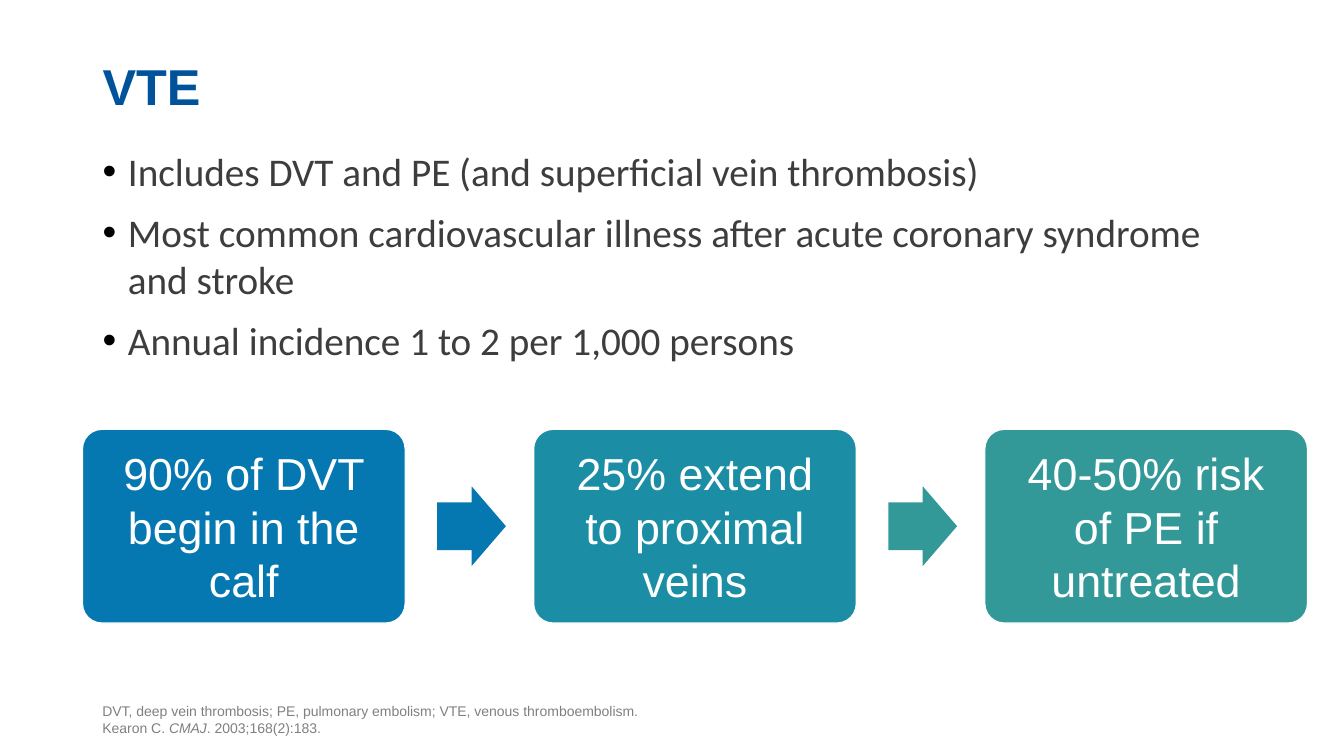
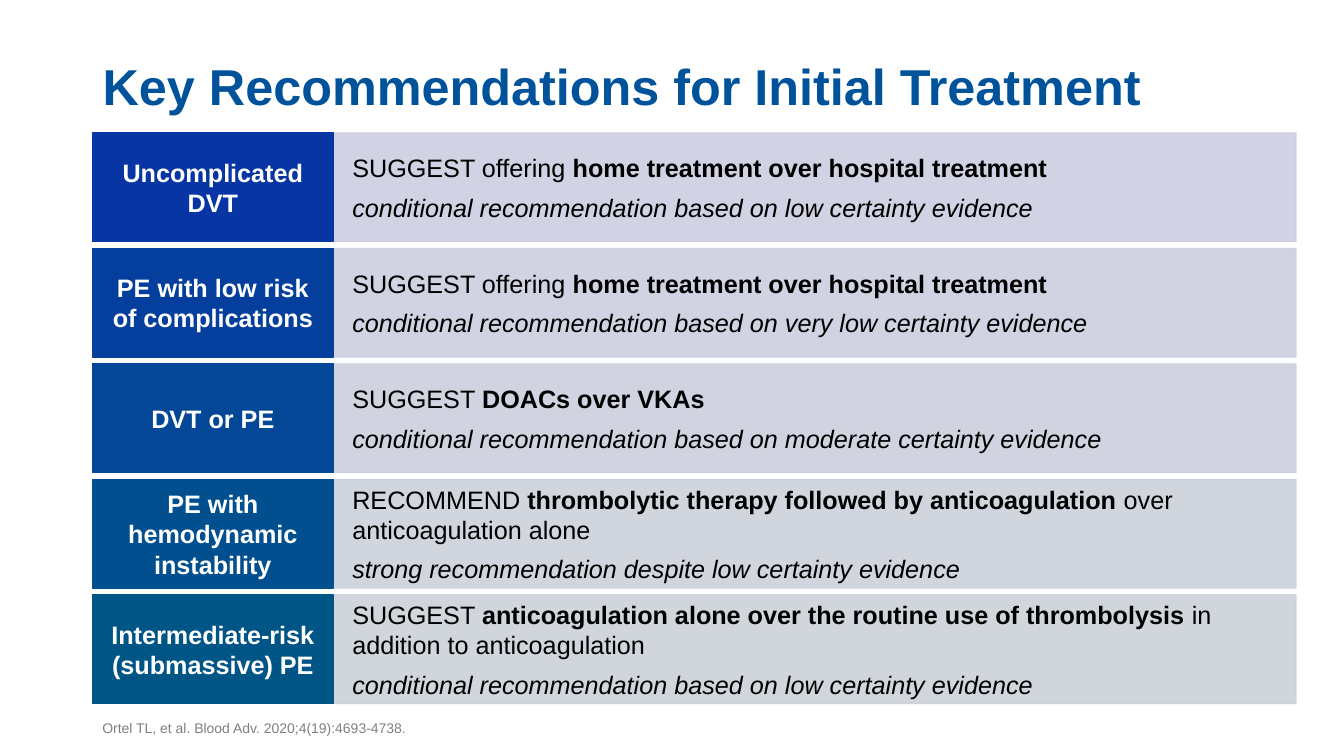
from lxml.etree import SubElement
from pptx import Presentation
from pptx.dml.color import RGBColor
from pptx.enum.shapes import MSO_SHAPE as Shape
from pptx.enum.text import MSO_ANCHOR as Anchor, MSO_AUTO_SIZE as AutoSize, PP_ALIGN as Align
from pptx.oxml.ns import qn
from pptx.util import Cm, Pt

COLORS = {
    "title": "00539B", "body": "3D3D3D", "note": "808080", "black": "000000", "white": "FFFFFF",
    "calf": "0577B1", "proximal": "1B8EA6", "embolism": "339898",
    "label 1": "0736A4", "label 2": "053F9D", "label 3": "034796", "label 4": "014F8F", "label 5": "005587",
    "advice 1": "CCCEE0", "advice 2": "CCCFDF", "advice 3": "CCD0DD", "advice 4": "CCD1DB", "advice 5": "CCD1D9",
}
LEFT, WIDTH = 2.33, 29.21

FACTS = [
    "Includes DVT and PE (and superficial vein thrombosis)",
    "Most common cardiovascular illness after acute coronary syndrome and stroke",
    "Annual incidence 1 to 2 per 1,000 persons",
]
STEPS = [
    ("90% of DVT begin in the calf", "calf"),
    ("25% extend to proximal veins", "proximal"),
    ("40-50% risk of PE if untreated", "embolism"),
]
ARROWS = ["calf", "embolism"]
VTE_NOTE = [
    [("DVT, deep vein thrombosis; PE, pulmonary embolism; VTE, venous thromboembolism.", "")],
    [("Kearon C. ", ""), ("CMAJ", "i"), (". 2003;168(2):183.", "")],
]
RECOMMENDATIONS = [
    ("Uncomplicated DVT",
     [("SUGGEST offering ", ""), ("home treatment over hospital treatment", "b")],
     "conditional recommendation based on low certainty evidence"),
    ("PE with low risk of complications",
     [("SUGGEST offering ", ""), ("home treatment over hospital treatment", "b")],
     "conditional recommendation based on very low certainty evidence"),
    ("DVT or PE",
     [("SUGGEST ", ""), ("DOACs over VKAs", "b")],
     "conditional recommendation based on moderate certainty evidence"),
    ("PE with hemodynamic instability",
     [("RECOMMEND ", ""), ("thrombolytic therapy followed by anticoagulation ", "b"),
      ("over anticoagulation alone", "")],
     "strong recommendation despite low certainty evidence"),
    ("Intermediate-risk (submassive) PE",
     [("SUGGEST ", ""), ("anticoagulation alone over the routine use of thrombolysis ", "b"),
      ("in addition to anticoagulation", "")],
     "conditional recommendation based on low certainty evidence"),
]
TREATMENT_NOTE = [[("Ortel TL, et al. Blood Adv. 2020;4(19):4693-4738.", "")]]


def color(name):
    return RGBColor.from_string(COLORS[name])


def place(shape, left, top, width, height):
    shape.left, shape.top, shape.width, shape.height = Cm(left), Cm(top), Cm(width), Cm(height)


def style(para, size, name, face="Arial", bold=False, align=Align.LEFT):
    para.alignment = align
    font = para.font
    font.size, font.name, font.bold = Pt(size), face, bold
    font.color.rgb = color(name)


def add_spans(para, spans):
    for text, emphasis in spans:
        span = para.add_run()
        span.text = text
        if emphasis == "b":
            span.font.bold = True
        elif emphasis == "i":
            span.font.italic = True


def add_bullet(para):
    props = para._p.get_or_add_pPr()
    props.set("marL", str(Cm(0.64)))
    props.set("indent", str(-Cm(0.64)))
    tint = SubElement(props, qn("a:buClr"))
    SubElement(tint, qn("a:srgbClr"), val=COLORS["black"])
    SubElement(props, qn("a:buFont"), typeface="Arial")
    SubElement(props, qn("a:buChar"), char="•")


def add_page(deck, layout, title, note):
    page = deck.slides.add_slide(deck.slide_layouts[layout])
    heading = page.shapes.title
    place(heading, LEFT, 0, WIDTH, 3.07)
    frame = heading.text_frame
    frame.text = title
    frame.auto_size, frame.vertical_anchor = AutoSize.NONE, Anchor.BOTTOM
    frame.paragraphs[0].line_spacing = 0.9
    style(frame.paragraphs[0], 36, "title", bold=True)

    box = page.shapes.add_textbox(Cm(LEFT), Cm(17.65), Cm(WIDTH), Cm(1.02))
    frame = box.text_frame
    frame.word_wrap, frame.vertical_anchor = True, Anchor.BOTTOM
    para = frame.paragraphs[0]
    for number, spans in enumerate(note):
        if number:
            para.add_line_break()
        add_spans(para, spans)
    style(para, 10, "note")
    return page


def add_block(page, kind, bounds, fill, line=None, margin=0.33):
    block = page.shapes.add_shape(kind, *map(Cm, bounds))
    block.shadow.inherit = False
    block.fill.solid()
    block.fill.fore_color.rgb = color(fill)
    if line:
        block.line.color.rgb = color(line)
        block.line.width = Pt(0.85)
    else:
        block.line.fill.background()
    frame = block.text_frame
    frame.word_wrap, frame.vertical_anchor = True, Anchor.MIDDLE
    frame.margin_left = frame.margin_right = Cm(margin)
    frame.margin_top = frame.margin_bottom = Cm(0.1)
    return block


def make_translucent(block, percent):
    for tint in block._element.spPr.iter(qn("a:srgbClr")):
        SubElement(tint, qn("a:alpha"), val=str(percent * 1000))


def build_vte(deck):
    page = add_page(deck, 1, "VTE", VTE_NOTE)
    body = page.placeholders[1]
    place(body, LEFT, 3.58, WIDTH, 13.59)
    frame = body.text_frame
    frame.text = "\n".join(FACTS)
    frame.auto_size = AutoSize.NONE
    for number, para in enumerate(frame.paragraphs):
        add_bullet(para)
        para.space_before = Pt(10 if number else 0)
        style(para, 28, "body", "Calibri")

    left, top, width, height, pitch = 2.08, 10.82, 8.13, 4.88, 11.37
    for number, (text, fill) in enumerate(STEPS):
        bounds = (left + number * pitch, top, width, height)
        step = add_block(page, Shape.ROUNDED_RECTANGLE, bounds, fill, "white")
        step.adjustments[0] = 0.1
        step.text_frame.text = text
        style(step.text_frame.paragraphs[0], 32, "white", align=Align.CENTER)

    arrow_height = 2.01
    for number, fill in enumerate(ARROWS):
        bounds = (left + number * pitch + 8.94, top + (height - arrow_height) / 2, 1.73, arrow_height)
        arrow = add_block(page, Shape.RIGHT_ARROW, bounds, fill)
        arrow.adjustments[0], arrow.adjustments[1] = 0.6, 0.5


def build_treatment(deck):
    page = add_page(deck, 5, "Key Recommendations for Initial Treatment", TREATMENT_NOTE)
    top, height, pitch, label_width, advice_width = 3.35, 2.74, 2.91, 6.07, 24.26
    for number, (label, advice, strength) in enumerate(RECOMMENDATIONS):
        row_top = top + number * pitch
        fill = f"advice {number + 1}"
        bounds = (LEFT + label_width, row_top, advice_width, height)
        panel = add_block(page, Shape.RECTANGLE, bounds, fill, fill, 0.48)
        make_translucent(panel, 90)
        first = panel.text_frame.paragraphs[0]
        add_spans(first, advice)
        second = panel.text_frame.add_paragraph()
        add_spans(second, [(strength, "i")])
        second.space_before = Pt(6.5)
        for para in (first, second):
            style(para, 18, "black")

        fill = f"label {number + 1}"
        tag = add_block(page, Shape.RECTANGLE, (LEFT, row_top, label_width, height), fill, fill)
        tag.text_frame.text = label
        style(tag.text_frame.paragraphs[0], 18, "white", bold=True, align=Align.CENTER)


def main():
    """Build the two slides on venous thromboembolism and its initial treatment."""
    deck = Presentation()
    deck.slide_width, deck.slide_height = Cm(33.87), Cm(19.05)
    build_vte(deck)
    build_treatment(deck)
    deck.save("out.pptx")


if __name__ == "__main__":
    main()
